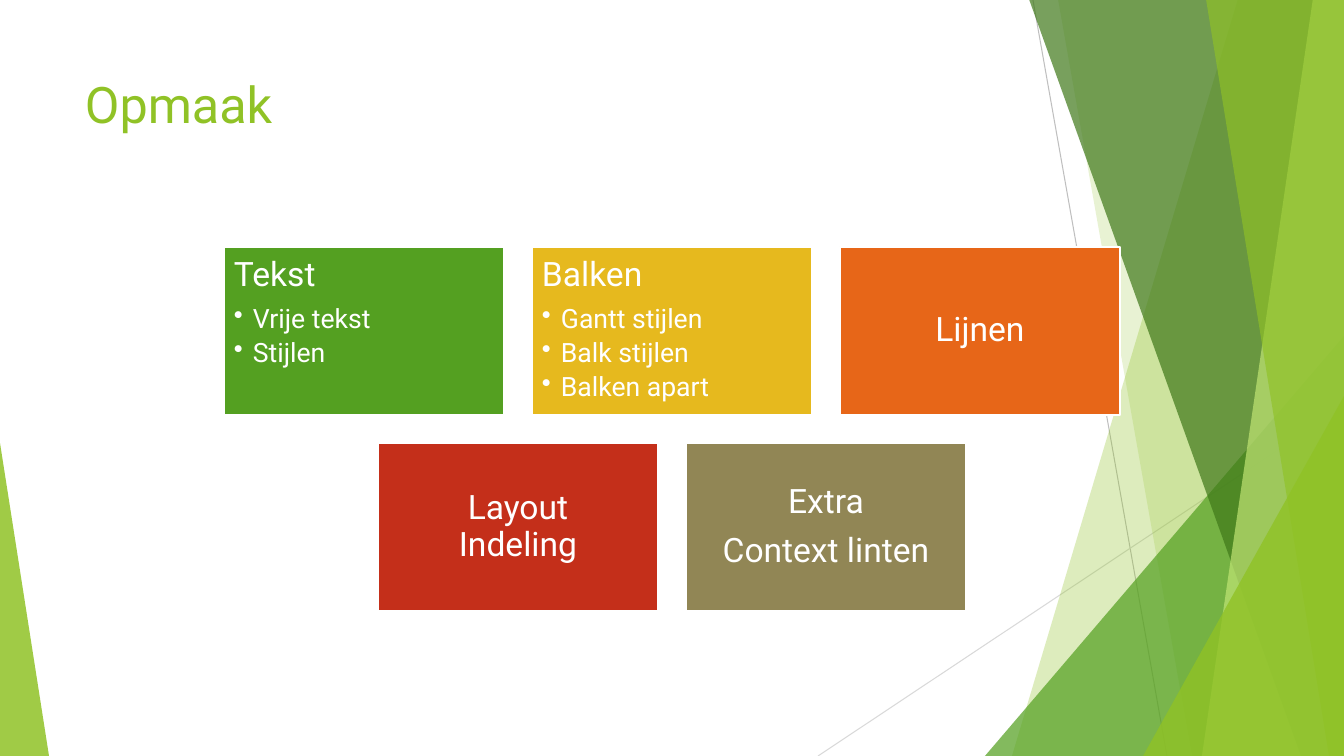
"""Build the slide "Opmaak": five ribbon topics beside a faceted green edge."""
from lxml import etree
from pptx import Presentation
from pptx.dml.color import RGBColor
from pptx.enum.shapes import MSO_CONNECTOR, MSO_SHAPE
from pptx.enum.text import MSO_ANCHOR, PP_ALIGN
from pptx.oxml.ns import qn
from pptx.util import Pt

STRAIGHT = MSO_CONNECTOR.STRAIGHT
TRIANGLE = MSO_SHAPE.ISOSCELES_TRIANGLE
RECTANGLE = MSO_SHAPE.RECTANGLE
TOP, MIDDLE = MSO_ANCHOR.TOP, MSO_ANCHOR.MIDDLE
LEFT, CENTER = PP_ALIGN.LEFT, PP_ALIGN.CENTER

SLIDE_WIDTH, SLIDE_HEIGHT = 1344, 756
EMU_PER_PX = 12192000 / SLIDE_WIDTH
FONT = "Roboto"
COLORS = {
    "white": "FFFFFF", "lime": "90C226", "green": "54A021", "forest": "3F7819",
    "pale": "C0E474", "yellow": "E6B91E", "orange": "E76618", "red": "C42F1A",
    "olive": "918655", "gray": "BFBFBF", "silver": "D9D9D9",
}

CARD_WIDTH, CARD_HEIGHT, GAP = 280, 168, 28
CARDS_TOP = 247
CARD_ROWS = [
    [("green", ["Tekst"], ["Vrije tekst", "Stijlen"]),
     ("yellow", ["Balken"], ["Gantt stijlen", "Balk stijlen", "Balken apart"]),
     ("orange", ["Lijnen"], [])],
    [("red", ["Layout\nIndeling"], []),
     ("olive", ["Extra", "Context linten"], [])],
]


def px(length):
    """Turn pixels into EMU."""
    return round(length * EMU_PER_PX)


def rgb(name):
    """Look up a named colour."""
    return RGBColor.from_string(COLORS[name])


def paint(shape, color, opacity=100):
    """Fill a shape without outline or shadow, optionally see-through."""
    shape.shadow.inherit = False
    shape.fill.solid()
    shape.fill.fore_color.rgb = rgb(color)
    shape.line.fill.background()
    if opacity < 100:
        tint = next(shape.element.iter(qn("a:srgbClr")))
        etree.SubElement(tint, qn("a:alpha"), val=str(opacity * 1000))


def add_ray(slide, start, end, color):
    """Draw a thin straight line."""
    ray = slide.shapes.add_connector(STRAIGHT, *map(px, start + end))
    ray.line.color.rgb = rgb(color)
    ray.line.width = Pt(0.75)
    etree.SubElement(ray.element.spPr, qn("a:effectLst"))


def add_facet(slide, top_left, bottom_left, color, opacity):
    """Draw a full-height facet reaching the right slide edge."""
    outline = slide.shapes.build_freeform(top_left, -1, scale=EMU_PER_PX)
    outline.add_line_segments([(SLIDE_WIDTH, -1), (SLIDE_WIDTH, SLIDE_HEIGHT),
                               (bottom_left, SLIDE_HEIGHT)])
    paint(outline.convert_to_shape(), color, opacity)


def add_corner(slide, left, top, width, apex, color, opacity):
    """Draw a right triangle standing on the bottom edge."""
    corner = slide.shapes.add_shape(
        TRIANGLE, px(left), px(top), px(width), px(SLIDE_HEIGHT - top))
    corner.adjustments[0] = apex
    paint(corner, color, opacity)


def write(frame, text, first=False, size=24, color="white", align=LEFT,
          spacing=1.0, after=0, bullet=False):
    """Write one formatted paragraph into a text frame."""
    paragraph = frame.paragraphs[0] if first else frame.add_paragraph()
    paragraph.text = text
    paragraph.alignment = align
    paragraph.line_spacing = spacing
    paragraph.space_after = Pt(after)
    for run in paragraph.runs:
        run.font.name = FONT
        run.font.size = Pt(size)
        run.font.color.rgb = rgb(color)
    if bullet:
        paragraph.level = 1
        properties = paragraph._p.get_or_add_pPr()
        properties.set("marL", str(px(19)))
        properties.set("indent", str(-px(19)))
        etree.SubElement(properties, qn("a:buChar"), char="•")


def add_title(slide, text):
    """Add the slide title."""
    title = slide.shapes.add_textbox(px(75), px(68), px(948), px(104))
    title.text_frame.word_wrap = True
    write(title.text_frame, text, first=True, size=36, color="lime")


def add_card(slide, left, top, color, headings, points):
    """Add a topic card, centred unless it has bullet points."""
    card = slide.shapes.add_shape(
        RECTANGLE, px(left), px(top), px(CARD_WIDTH), px(CARD_HEIGHT))
    paint(card, color)
    card.line.color.rgb = rgb("white")
    card.line.width = Pt(1.5)
    frame = card.text_frame
    frame.word_wrap = True
    frame.vertical_anchor = TOP if points else MIDDLE
    frame.margin_left = frame.margin_right = px(10)
    frame.margin_top = frame.margin_bottom = px(10)
    for index, heading in enumerate(headings):
        write(frame, heading, first=index == 0, spacing=0.9, after=9,
              align=LEFT if points else CENTER)
    for point in points:
        write(frame, point, size=19, spacing=0.9, after=3.5, bullet=True)


def add_backdrop(slide):
    """Draw the faceted edge decoration from back to front."""
    add_ray(slide, (1033, 0), (1167, SLIDE_HEIGHT), "gray")
    add_ray(slide, (SLIDE_WIDTH, 406), (818, SLIDE_HEIGHT), "silver")
    add_facet(slide, 1238, 1012, "lime", 30)
    add_facet(slide, 1058, 1192, "lime", 20)
    add_corner(slide, 985, 336, 359, 1, "green", 72)
    add_facet(slide, 1029, 1301, "forest", 70)
    add_facet(slide, 1313, 1202, "pale", 70)
    add_facet(slide, 1206, 1329, "lime", 65)
    add_corner(slide, 1143, 396, 201, 1, "lime", 80)
    add_corner(slide, 0, 443, 49, 0, "lime", 85)


def main():
    """Build and save the presentation."""
    deck = Presentation()
    deck.slide_width, deck.slide_height = px(SLIDE_WIDTH), px(SLIDE_HEIGHT)
    slide = deck.slides.add_slide(deck.slide_layouts[6])
    add_backdrop(slide)
    add_title(slide, "Opmaak")
    for row, cards in enumerate(CARD_ROWS):
        row_width = len(cards) * (CARD_WIDTH + GAP) - GAP
        row_left = (SLIDE_WIDTH - row_width) // 2
        row_top = CARDS_TOP + row * (CARD_HEIGHT + GAP)
        for column, (color, headings, points) in enumerate(cards):
            card_left = row_left + column * (CARD_WIDTH + GAP)
            add_card(slide, card_left, row_top, color, headings, points)
    deck.save("out.pptx")


if __name__ == "__main__":
    main()
